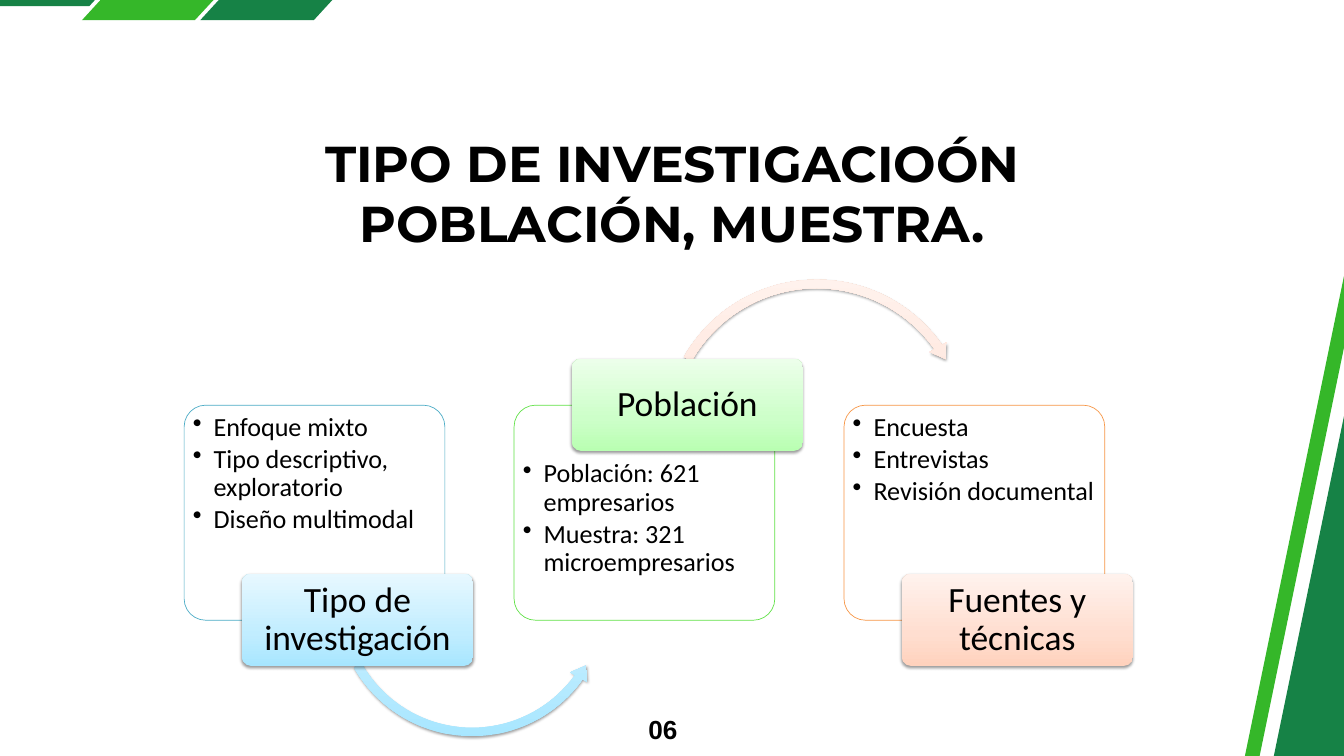
from dataclasses import dataclass

from lxml import etree
from pptx import Presentation
from pptx import util as u
from pptx.dml.color import RGBColor
from pptx.enum import shapes, text
from pptx.oxml import ns


@dataclass(frozen=True)
class Theme:
    dark_green: str = "168246"
    green: str = "35B729"
    ink: str = "000000"
    white: str = "FFFFFF"
    blue_fade: tuple = ("A7E6FF", "C1EDFF", "E7F8FF")
    green_fade: tuple = ("B9FFB2", "CDFFC9", "ECFFEA")
    peach_fade: tuple = ("FFD2BD", "FFDED0", "FFF2ED")
    blue_edge: str = "4BACC6"
    green_edge: str = "60E146"
    orange_edge: str = "F79646"
    title_size: int = 54
    label_size: int = 38
    body_size: int = 28


theme = Theme()
deck = Presentation()
deck.slide_width, deck.slide_height = u.Inches(20), u.Inches(11.25)
slide = deck.slides.add_slide(deck.slide_layouts[6])


def write(lines, box, size, font="Calibri", bold=False, align=text.PP_ALIGN.LEFT,
          anchor=text.MSO_ANCHOR.TOP, insets=(0, 0), spacing=None, after=0, bullets=False):
    frame = slide.shapes.add_textbox(*map(u.Inches, box)).text_frame
    frame.word_wrap = True
    frame.vertical_anchor = anchor
    frame.margin_left = frame.margin_right = u.Inches(insets[0])
    frame.margin_top = frame.margin_bottom = u.Inches(insets[1])
    for index, line in enumerate(lines):
        paragraph = frame.add_paragraph() if index else frame.paragraphs[0]
        paragraph.alignment = align
        paragraph.line_spacing = spacing
        paragraph.space_after = u.Pt(after)
        if bullets:
            properties = paragraph._p.get_or_add_pPr()
            properties.set("marL", str(u.Inches(0.31)))
            properties.set("indent", str(-u.Inches(0.31)))
            etree.SubElement(properties, ns.qn("a:buChar"), char="•")
        run = paragraph.add_run()
        run.text = line
        run.font.name, run.font.size, run.font.bold = font, u.Pt(size), bold
        run.font.color.rgb = RGBColor.from_string(theme.ink)


def fade(shape, colors):
    shape.line.fill.background()
    shape.fill.gradient()
    shape.fill.gradient_angle = 90
    shape.shadow.inherit = False
    properties = shape._element.spPr
    stops = properties.find(".//" + ns.qn("a:gsLst"))
    stops.clear()
    for position, color in zip((0, 35000, 100000), colors):
        stop = etree.SubElement(stops, ns.qn("a:gs"), pos=str(position))
        etree.SubElement(stop, ns.qn("a:srgbClr"), val=color)
    shadow = etree.SubElement(properties.find(ns.qn("a:effectLst")), ns.qn("a:outerShdw"),
                              blurRad="40000", dist="20000", dir="5400000", rotWithShape="0")
    shade = etree.SubElement(shadow, ns.qn("a:srgbClr"), val=theme.ink)
    etree.SubElement(shade, ns.qn("a:alpha"), val="38000")


ribbons = [
    (theme.dark_green, [(-1.79, -0.83), (2.17, -0.83), (1.33, 0.09), (-2.63, 0.09)]),
    (theme.green, [(2.44, -1.03), (4.13, -1.03), (2.9, 0.3), (1.22, 0.3)]),
    (theme.dark_green, [(4.2, -1.03), (5.89, -1.03), (4.67, 0.3), (2.98, 0.3)]),
    (theme.dark_green, [(18.13, 15.25), (21.45, -0.83), (26.01, 0.12), (22.69, 16.19)]),
    (theme.green, [(17.7, 15.25), (21.02, -0.83), (21.23, -0.78), (17.91, 15.29)]),
]
for color, corners in ribbons:
    points = [(u.Inches(x), u.Inches(y)) for x, y in corners]
    outline = slide.shapes.build_freeform(*points[0])
    outline.add_line_segments(points[1:], close=True)
    ribbon = outline.convert_to_shape()
    ribbon.fill.solid()
    ribbon.fill.fore_color.rgb = RGBColor.from_string(color)
    ribbon.line.fill.background()
    ribbon.shadow.inherit = False

write(["TIPO DE INVESTIGACIOÓN POBLACIÓN, MUESTRA."], (2.42, 1.96, 15.17, 1.82),
      theme.title_size, font="Montserrat", bold=True, align=text.PP_ALIGN.CENTER)
write(["06"], (9.52, 10.54, 0.56, 0.5), theme.body_size, font="Arial", bold=True,
      align=text.PP_ALIGN.RIGHT, spacing=u.Pt(39.2))

left_arrow = (shapes.MSO_SHAPE.LEFT_CIRCULAR_ARROW, (4.92, 6.83, 4.21, 4.21),
              (0.03, 3.695, 21.45, 90.245, 0.035))
right_arrow = (shapes.MSO_SHAPE.CIRCULAR_ARROW, (9.8, 4.08, 4.71, 4.71),
               (0.027, 3.282, 194.963, 125.755, 0.031))
stages = [
    ("Tipo de investigación", ["Enfoque mixto", "Tipo descriptivo, exploratorio", "Diseño multimodal"],
     theme.blue_edge, theme.blue_fade, 6.1, 8.54, left_arrow, theme.blue_fade),
    ("Población", ["Población: 621 empresarios", "Muestra: 321 microempresarios"],
     theme.green_edge, theme.green_fade, 6.79, 5.34, right_arrow, theme.peach_fade),
    ("Fuentes y técnicas", ["Encuesta", "Entrevistas", "Revisión documental"],
     theme.orange_edge, theme.peach_fade, 6.1, 8.54, None, None),
]
for column, (name, details, edge, colors, details_top, label_top, turn, turn_colors) in enumerate(stages):
    left = 2.74 + 4.91 * column
    card = slide.shapes.add_shape(shapes.MSO_SHAPE.ROUNDED_RECTANGLE,
                                  *map(u.Inches, (left, 6.03, 3.88, 3.2)))
    card.adjustments[0] = 0.1
    card.fill.solid()
    card.fill.fore_color.rgb = RGBColor.from_string(theme.white)
    tint = card._element.spPr.find(".//" + ns.qn("a:srgbClr"))
    etree.SubElement(tint, ns.qn("a:alpha"), val="90000")
    card.line.color.rgb = RGBColor.from_string(edge)
    card.line.width = u.Pt(0.75)
    card.shadow.inherit = False
    write(details, (left + 0.07, details_top, 3.73, 2.36), theme.body_size,
          insets=(0.06, 0.06), spacing=0.9, after=4, bullets=True)

    if turn:
        preset, box, bends = turn
        arrow = slide.shapes.add_shape(preset, *map(u.Inches, box))
        for index, bend in enumerate(bends):
            arrow.adjustments[index] = bend
        fade(arrow, turn_colors)

    label = slide.shapes.add_shape(shapes.MSO_SHAPE.ROUNDED_RECTANGLE,
                                   *map(u.Inches, (left + 0.86, label_top, 3.44, 1.37)))
    label.adjustments[0] = 0.1
    fade(label, colors)
    write([name], (left + 0.9, label_top + 0.04, 3.36, 1.29), theme.label_size,
          align=text.PP_ALIGN.CENTER, anchor=text.MSO_ANCHOR.MIDDLE,
          insets=(0.08, 0.05), spacing=0.9)

deck.save("out.pptx")
